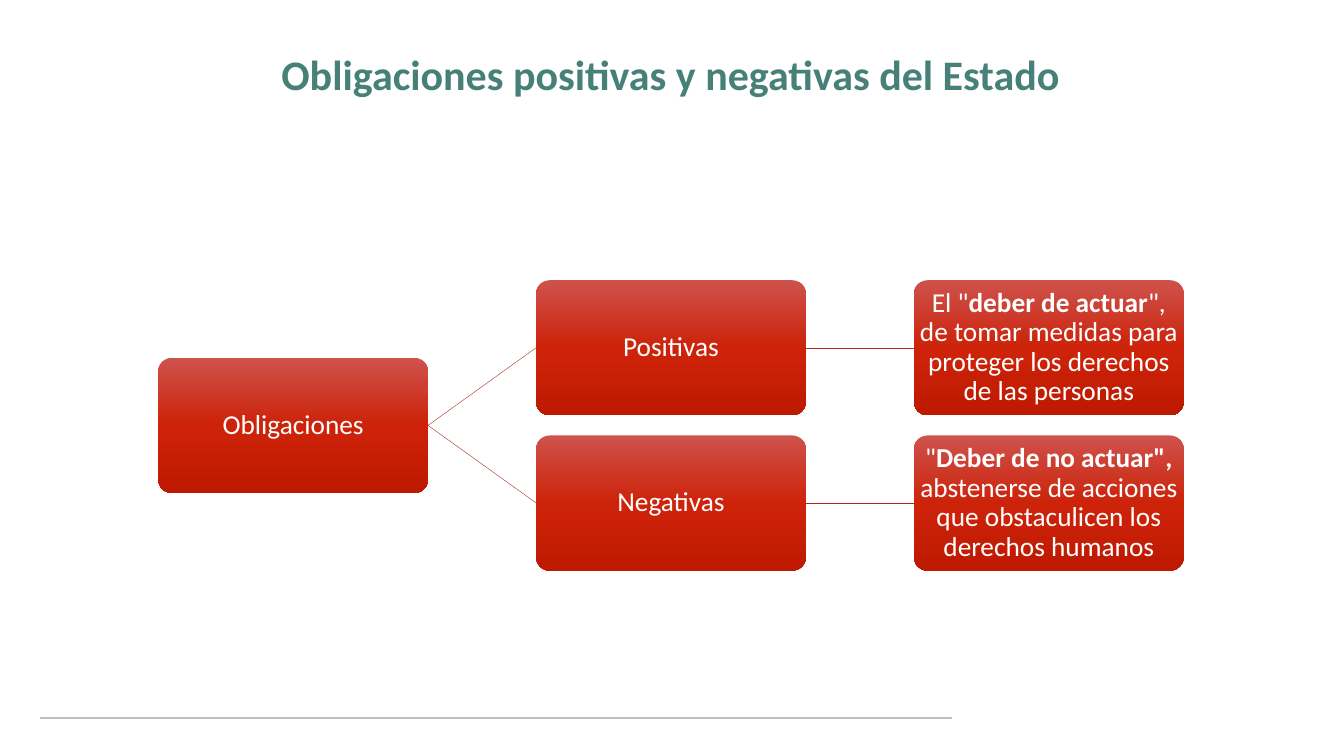
from copy import deepcopy
from dataclasses import dataclass

from pptx import Presentation
from pptx.dml.color import RGBColor
from pptx.enum.shapes import MSO_CONNECTOR as CONN, MSO_SHAPE as SHAPE
from pptx.enum.text import MSO_ANCHOR as ANCHOR, PP_ALIGN as ALIGN
from pptx.oxml.ns import qn
from pptx.util import Inches, Pt


@dataclass(frozen=True)
class Theme:
    font: str = "Calibri"
    title: str = "468078"
    box_text: str = "FFFFFF"
    gradient: tuple = ("CE524C", "CD230A", "BE1A01")
    branch: str = "9D220F"
    link: str = "B22611"
    rule: str = "BFBFBF"
    title_size: int = 60
    box_size: int = 39


THEME = Theme()

# Tree grid
BOX_W, BOX_H = 5.35, 2.68
LEFT, COL_STEP = 3.14, 7.495
TOP, ROW_STEP = 5.56, 3.08
LEFT_SITE, RIGHT_SITE = 1, 3

BRANCHES = [
    ("Positivas", [
        ('El "', False),
        ("deber de actuar", True),
        ('", de tomar medidas para proteger los derechos de las personas', False),
    ]),
    ("Negativas", [
        ('"', False),
        ('Deber de no actuar", ', True),
        ("abstenerse de acciones que obstaculicen los derechos humanos", False),
    ]),
]


def write_runs(tf, runs, size, color):
    """Fill a text frame with one centred paragraph of (text, bold) runs."""
    tf.word_wrap = True
    p = tf.paragraphs[0]
    p.alignment = ALIGN.CENTER
    p.line_spacing = 0.9
    for text, bold in runs:
        r = p.add_run()
        r.text = text
        r.font.name = THEME.font
        r.font.size = Pt(size)
        r.font.bold = bold
        r.font.color.rgb = RGBColor.from_string(color)


def set_margins(tf, side, top, bottom):
    tf.margin_left = tf.margin_right = Inches(side)
    tf.margin_top, tf.margin_bottom = Inches(top), Inches(bottom)


def fill_gradient(sp, colors):
    """Evenly spaced vertical gradient, first colour on top."""
    sp.fill.gradient()
    sp.fill.gradient_angle = 270
    stops = sp._element.spPr.find(qn("a:gradFill")).find(qn("a:gsLst"))
    while len(stops) < len(colors):
        stops.append(deepcopy(stops[0]))
    for i, (stop, color) in enumerate(zip(sp.fill.gradient_stops, colors)):
        stop.position = i / (len(colors) - 1)
        stop.color.rgb = RGBColor.from_string(color)


def add_title(s, text):
    sp = s.shapes.add_textbox(Inches(0.8), Inches(0.55), Inches(25.01), Inches(2.9))
    tf = sp.text_frame
    tf.vertical_anchor = ANCHOR.TOP
    set_margins(tf, 0.2, 0.53, 0.1)
    write_runs(tf, [(text, True)], THEME.title_size, THEME.title)


def add_box(s, col, row, runs):
    sp = s.shapes.add_shape(
        SHAPE.ROUNDED_RECTANGLE,
        Inches(LEFT + col * COL_STEP), Inches(TOP + row * ROW_STEP),
        Inches(BOX_W), Inches(BOX_H))
    sp.adjustments[0] = 0.1
    sp.shadow.inherit = False
    sp.line.fill.background()
    fill_gradient(sp, THEME.gradient)
    tf = sp.text_frame
    tf.vertical_anchor = ANCHOR.MIDDLE
    set_margins(tf, 0.03, 0.03, 0.03)
    write_runs(tf, runs, THEME.box_size, THEME.box_text)
    return sp


def add_line(s, start, end, color, width):
    line = s.shapes.add_connector(
        CONN.STRAIGHT, *(Inches(v) for v in (*start, *end)))
    line.line.color.rgb = RGBColor.from_string(color)
    line.line.width = Pt(width)
    sp_pr = line._element.spPr
    sp_pr.append(sp_pr.makeelement(qn("a:effectLst"), {}))
    return line


def join_boxes(s, parent, child, color):
    line = add_line(s, (0, 0), (1, 1), color, 0.5)
    line.begin_connect(parent, RIGHT_SITE)
    line.end_connect(child, LEFT_SITE)


def main():
    prs = Presentation()
    prs.slide_width, prs.slide_height = Inches(26.66), Inches(15)
    s = prs.slides.add_slide(prs.slide_layouts[6])

    # Footer rule and title
    add_line(s, (0.8, 14.25), (18.88, 14.25), THEME.rule, 2.25)
    add_title(s, "Obligaciones positivas y negativas del Estado")

    # Tree: the root sits midway between the two branches
    root = add_box(s, 0, 0.5, [("Obligaciones", False)])
    for row, (name, duty) in enumerate(BRANCHES):
        branch = add_box(s, 1, row, [(name, False)])
        detail = add_box(s, 2, row, duty)
        join_boxes(s, root, branch, THEME.branch)
        join_boxes(s, branch, detail, THEME.link)

    prs.save("out.pptx")


if __name__ == "__main__":
    main()
